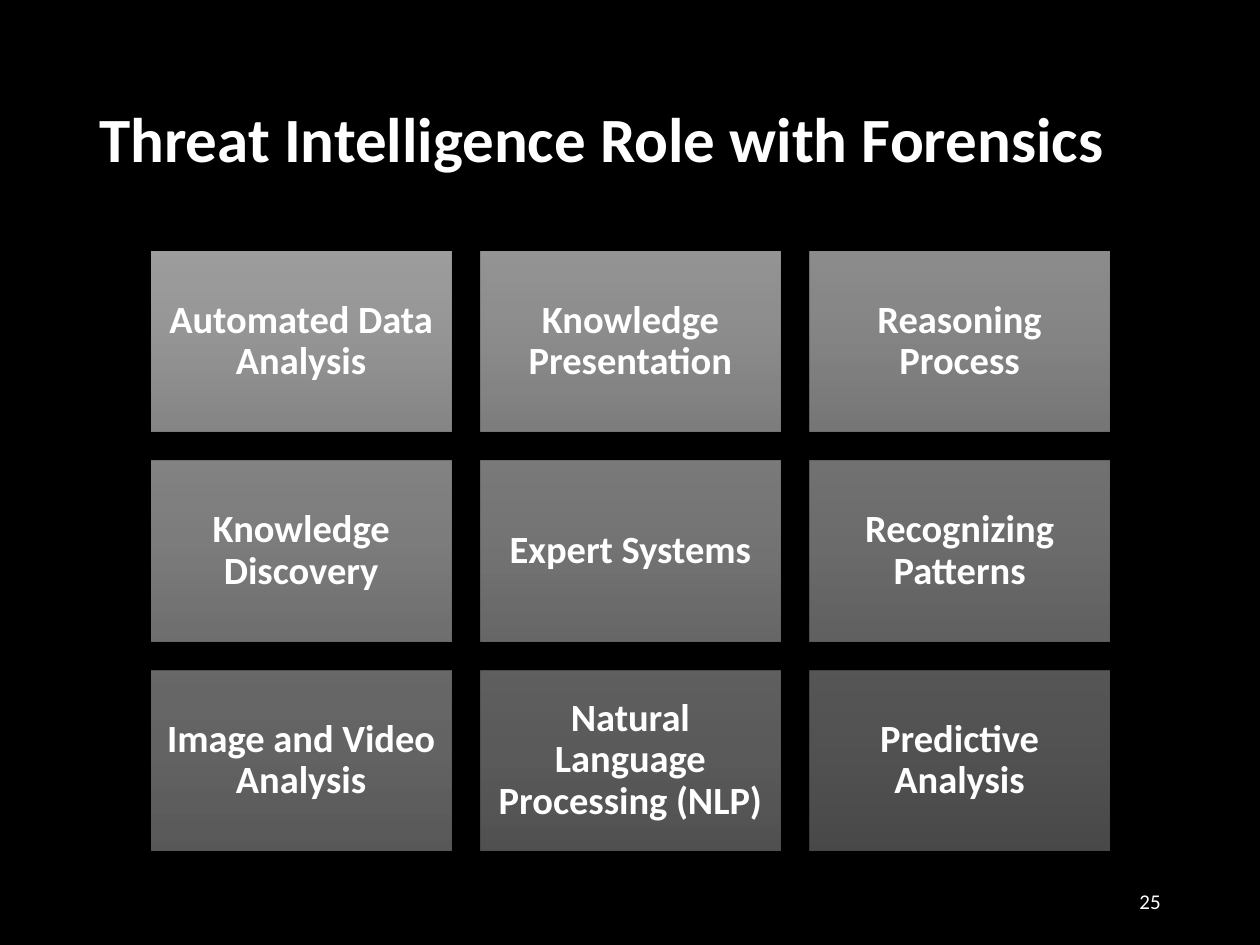
import pptx
import pptx.util
import pptx.dml.color
import pptx.enum.shapes
import pptx.enum.text
import pptx.oxml.ns
from copy import deepcopy
from lxml import etree

HUES = {"back": "000000", "text": "FFFFFF",
        "top": "AFAFAF", "mid": "A5A5A5", "low": "939393"}
TOPICS = [
    "Automated Data Analysis", "Knowledge Presentation", "Reasoning Process",
    "Knowledge Discovery", "Expert Systems", "Recognizing Patterns",
    "Image and Video Analysis", "Natural Language Processing (NLP)",
    "Predictive Analysis",
]
ALIGN = pptx.enum.text.PP_ALIGN


class Deck:
    """Style and current slide, placed on a grid of 100 columns by 75 rows."""

    def __init__(self):
        self.show = pptx.Presentation()
        self.show.slide_width = pptx.util.Inches(10)
        self.show.slide_height = pptx.util.Inches(7.5)
        self.unit = self.show.slide_width / 100
        self.slide = self.show.slides.add_slide(self.show.slide_layouts[6])
        fill = self.slide.background.fill
        fill.solid()
        fill.fore_color.rgb = self.hue("back")

    def hue(self, name):
        return pptx.dml.color.RGBColor.from_string(HUES[name])

    def area(self, *cells):
        return [round(cell * self.unit) for cell in cells]

    def letter(self, shape, text, size, bold, align, lead):
        frame = shape.text_frame
        frame.word_wrap = True
        frame.vertical_anchor = pptx.enum.text.MSO_ANCHOR.MIDDLE
        para = frame.paragraphs[0]
        para.text = text
        para.alignment = align
        para.line_spacing = lead
        font = para.font
        font.name = "Calibri"
        font.size = pptx.util.Pt(size)
        font.bold = bold
        font.color.rgb = self.hue("text")
        return frame

    def label(self, area, text, size, bold=False, align=ALIGN.LEFT, lead=1.0):
        box = self.slide.shapes.add_textbox(*self.area(*area))
        self.letter(box, text, size, bold, align, lead)

    def shade(self, shape, alpha):
        fill = shape.fill
        fill.gradient()
        fill.gradient_angle = 270
        name = pptx.oxml.ns.qn
        stops = shape._element.spPr.find(name("a:gradFill")).find(name("a:gsLst"))
        stops.insert(1, deepcopy(stops[0]))
        for stop, place, hue in zip(fill.gradient_stops, (0, 0.5, 1), ("top", "mid", "low")):
            stop.position = place
            stop.color.rgb = self.hue(hue)
        for node in stops:
            etree.SubElement(node[0], name("a:alpha")).set("val", str(alpha * 1000))

    def tile(self, area, text, alpha):
        kind = pptx.enum.shapes.MSO_SHAPE.RECTANGLE
        shape = self.slide.shapes.add_shape(kind, *self.area(*area))
        shape.shadow.inherit = False
        shape.line.fill.background()
        self.shade(shape, alpha)
        frame = self.letter(shape, text, 22, True, ALIGN.CENTER, 0.9)
        inset = pptx.util.Inches(0.09)
        frame.margin_left = frame.margin_right = inset
        frame.margin_top = frame.margin_bottom = inset


def main():
    deck = Deck()
    deck.label((6.9, 4, 86.2, 14.5), "Threat Intelligence Role with Forensics",
               36, bold=True, lead=0.9)
    for order, topic in enumerate(TOPICS):
        row, col = divmod(order, 3)
        area = (12 + 26.13 * col, 19.95 + 16.63 * row, 23.8, 14.3)
        deck.tile(area, topic, 90 - 5 * order)
    deck.label((70.6, 69.5, 22.5, 4), "25", 12, align=ALIGN.RIGHT)
    deck.show.save("out.pptx")


if __name__ == "__main__":
    main()
